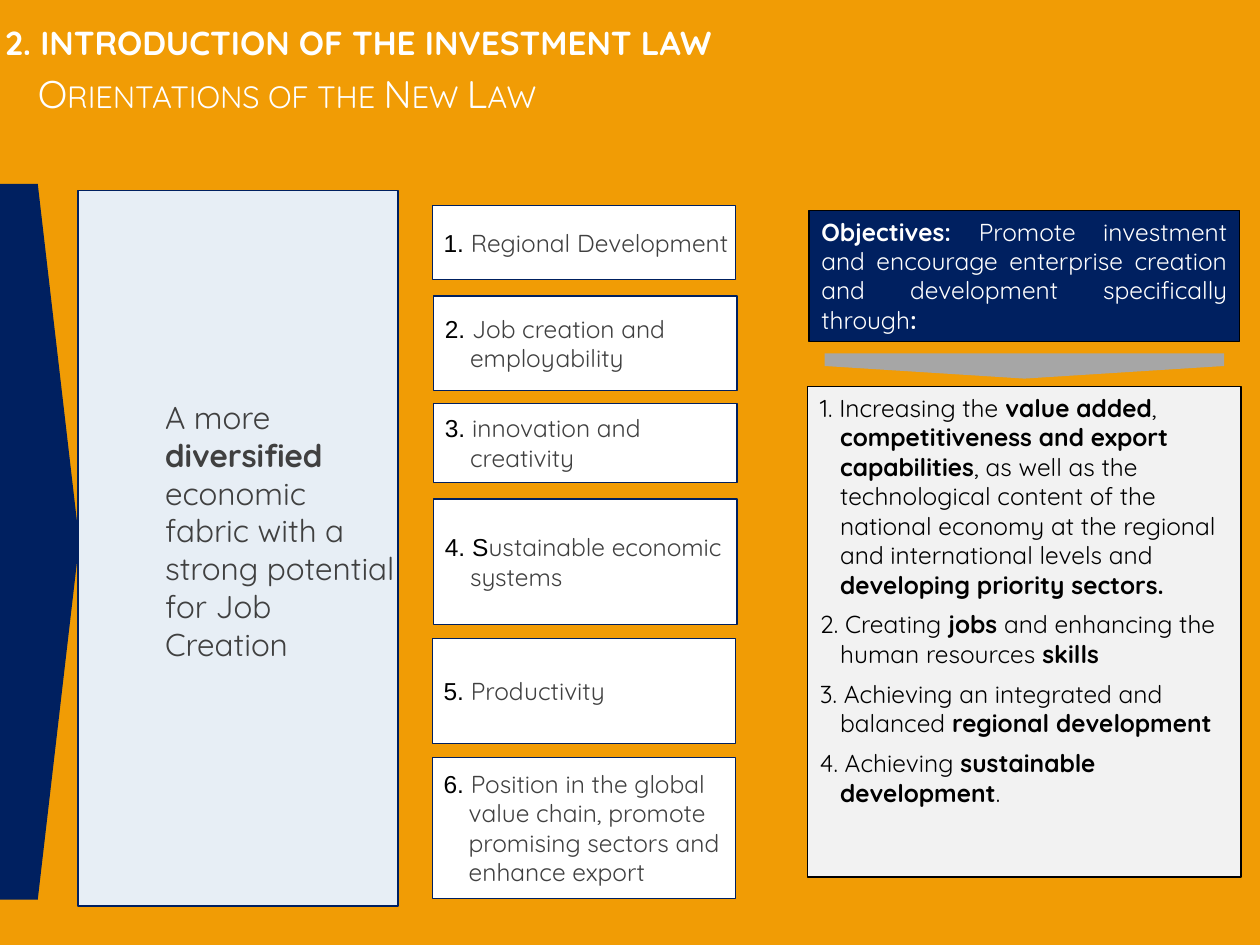
from pptx import Presentation
from pptx import util as u
from pptx.dml.color import RGBColor
from pptx.enum import shapes, text

rgb = RGBColor.from_string
NAVY, WHITE, BLACK, GREY = "002060", "FFFFFF", "000000", "404040"

prs = Presentation()
prs.slide_width, prs.slide_height = u.Inches(10), u.Inches(7.5)
col, row = prs.slide_width / 100, prs.slide_height / 75
s = prs.slides.add_slide(prs.slide_layouts[5])
s.background.fill.solid()
s.background.fill.fore_color.rgb = rgb("F19C05")


def add_box(kind, left, top, width, height, fill, line=None, inset=1.0):
    sp = s.shapes.add_shape(kind, int(left * col), int(top * row), int(width * col), int(height * row))
    sp.shadow.inherit = False
    sp.fill.solid()
    sp.fill.fore_color.rgb = rgb(fill)
    if line:
        sp.line.color.rgb = rgb(line)
        sp.line.width = u.Pt(0.75)
    else:
        sp.line.fill.background()
    tf = sp.text_frame
    tf.word_wrap = True
    tf.margin_left = tf.margin_right = int(inset * col)
    tf.vertical_anchor = text.MSO_ANCHOR.MIDDLE
    return sp


def write(p, marked, size, color, margin=0.0, indent=0.0, after=0):
    for i, part in enumerate(marked.split("*")):
        if part:
            r = p.add_run()
            r.text = part
            if i % 2:
                r.font.bold = True
    p.alignment = text.PP_ALIGN.LEFT
    p.space_after = u.Pt(after)
    pPr = p._p.get_or_add_pPr()
    pPr.set("marL", str(int(margin * col)))
    pPr.set("indent", str(int(indent * col)))
    p.font.name = "Quicksand"
    p.font.size = u.Pt(size)
    p.font.color.rgb = rgb(color)


RECT, PENTAGON = shapes.MSO_SHAPE.RECTANGLE, shapes.MSO_SHAPE.PENTAGON

add_box(PENTAGON, -0.3, 14.6, 6.6, 56.8, NAVY)

panel = add_box(RECT, 6.2, 15.1, 25.4, 56.8, "E7EEF5", NAVY, inset=0)
panel.text_frame.margin_bottom = int(3.3 * row)
write(panel.text_frame.paragraphs[0],
      "A more *diversified* economic fabric with a strong potential for Job Creation",
      18, GREY, margin=6.9)

orientations = [
    (34.3, 16.3, 5.9, "1. ", "Regional Development"),
    (34.4, 23.5, 7.5, "2. ", "Job creation and employability"),
    (34.4, 32.0, 6.3, "3. ", "innovation and creativity"),
    (34.4, 39.6, 10.0, "4. S", "ustainable economic systems"),
    (34.3, 50.7, 8.3, "5. ", "Productivity"),
    (34.3, 60.1, 11.2, "6. ", "Position in the global value chain, promote promising sectors and enhance export"),
]
for left, top, height, number, label in orientations:
    sp = add_box(RECT, left, top, 24.1, height, WHITE, NAVY, inset=0)
    p = sp.text_frame.paragraphs[0]
    r = p.add_run()
    r.text = number
    r.font.name = "Arial"
    r.font.color.rgb = rgb(BLACK)
    write(p, label, 14, GREY, margin=2.9, indent=-2, after=3)

intro = add_box(RECT, 64.2, 16.7, 34.2, 10.4, NAVY, BLACK)
intro.text_frame.vertical_anchor = text.MSO_ANCHOR.TOP
p = intro.text_frame.paragraphs[0]
write(p, "*Objectives: *Promote investment and encourage enterprise creation "
         "and development specifically through*:*", 14, WHITE, after=6)
p.alignment = text.PP_ALIGN.JUSTIFY

objectives = [
    "1. Increasing the *value added*, *competitiveness and export capabilities*, as well as the "
    "technological content of the national economy at the regional and international levels and "
    "*developing priority sectors.*",
    "2. Creating *jobs *and enhancing the human resources *skills*",
    "3. Achieving an integrated and balanced *regional development*",
    "4. Achieving *sustainable development*.",
]
goals = add_box(RECT, 64.1, 30.7, 34.4, 38.9, "F2F2F2", BLACK)
tf = goals.text_frame
tf.vertical_anchor = text.MSO_ANCHOR.TOP
for i, objective in enumerate(objectives):
    p = tf.add_paragraph() if i else tf.paragraphs[0]
    write(p, objective, 14, BLACK, margin=1.6, indent=-1.6, after=6)

title = s.shapes.title
title.left, title.top = int(-0.6 * col), int(1.3 * row)
title.width, title.height = int(101.2 * col), int(10.1 * row)
tf = title.text_frame
tf.word_wrap = True
tf.auto_size = text.MSO_AUTO_SIZE.NONE
tf.vertical_anchor = text.MSO_ANCHOR.TOP
write(tf.paragraphs[0], "*2. INTRODUCTION OF THE INVESTMENT LAW*", 19, WHITE)
p = tf.add_paragraph()
p.space_before = u.Pt(4.4)
write(p, "Orientations of the New Law", 22, WHITE, margin=2.6)
p.runs[0].font._element.set("cap", "small")

arrow = add_box(PENTAGON, 80.3, 13.2, 2, 31.7, "A6A6A6")
arrow.rotation = 90

prs.save("out.pptx")
